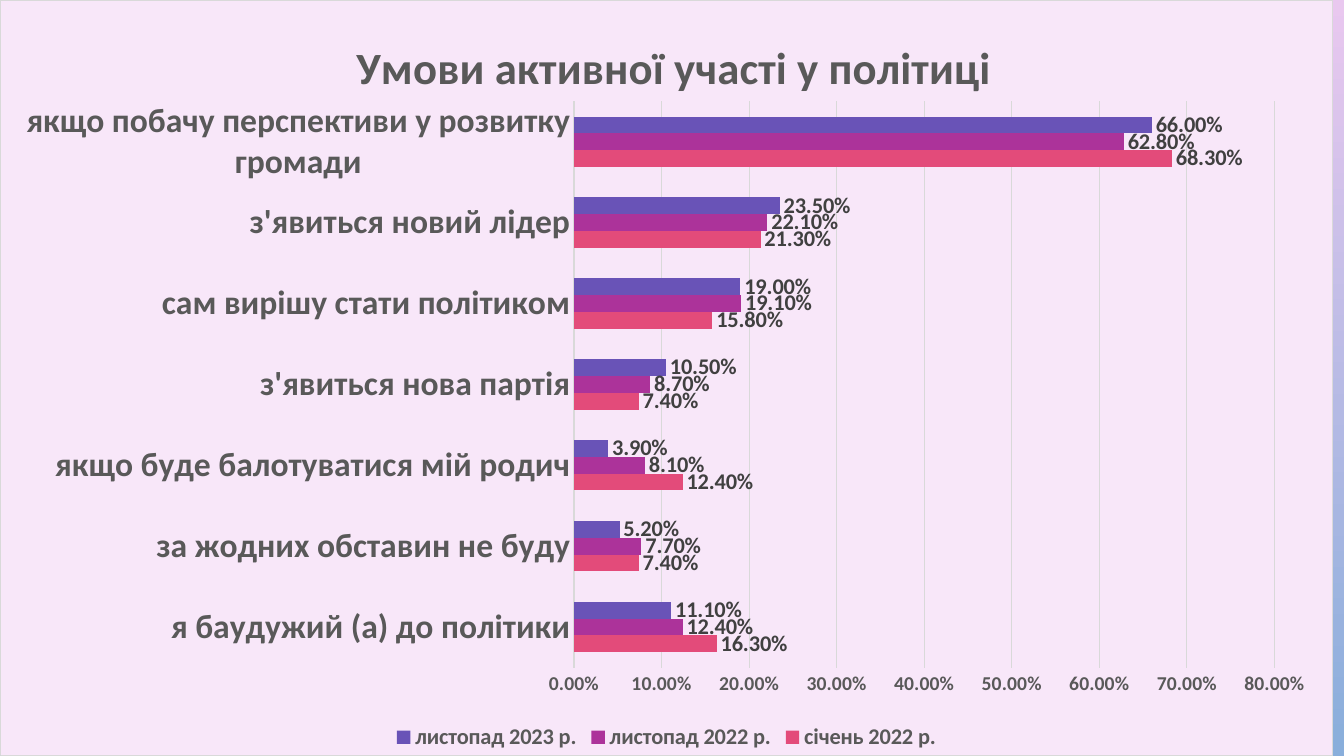
from lxml import etree
from pptx import Presentation
from pptx import util as u
from pptx.chart.data import CategoryChartData
from pptx.dml.color import RGBColor
from pptx.enum import chart as kinds
from pptx.oxml import parse_xml
from pptx.oxml.ns import nsdecls, qn

SCALE = 914400 / 100.8  # EMU in one px
WIDTH, HEIGHT = 1344, 756
COLORS = {
    "sky_top": "E9C8EF", "sky_bottom": "89AEDB", "panel": "F8E7F9",
    "line": "D9D9D9", "text": "595959", "value": "404040",
    "january": "E34B7A", "november": "AC339A", "latest": "6953B7",
}
CONDITIONS = [
    "я баудужий (а) до політики",
    "за жодних обставин не буду",
    "якщо буде балотуватися мій родич",
    "з'явиться нова партія",
    "сам вирішу стати політиком",
    "з'явиться новий лідер",
    "якщо побачу перспективи у розвитку громади",
]
SURVEYS = [
    ("січень 2022 р.", "january", [0.163, 0.074, 0.124, 0.074, 0.158, 0.213, 0.683]),
    ("листопад 2022 р.", "november", [0.124, 0.077, 0.081, 0.087, 0.191, 0.221, 0.628]),
    ("листопад 2023 р.", "latest", [0.111, 0.052, 0.039, 0.105, 0.19, 0.235, 0.66]),
]
PERCENT = "0.00%"


def px(length):
    return u.Emu(round(length * SCALE))


def color(name):
    return RGBColor.from_string(COLORS[name])


class SlideBuilder:
    font_name = "Calibri"

    def __init__(self, deck):
        self.page = deck.slides.add_slide(deck.slide_layouts[6])

    def style(self, font, size, name):
        font.name, font.size, font.bold = self.font_name, u.Pt(size), True
        font.color.rgb = color(name)

    def line(self, line):
        line.color.rgb = color("line")
        line.width = u.Pt(0.75)

    def background(self, *names):
        fill = self.page.background.fill
        fill.gradient()
        fill.gradient_angle = 270
        for stop, name, position in zip(fill.gradient_stops, names, (0, 1)):
            stop.color.rgb = color(name)
            stop.position = position

    def bar_chart(self, left, top, width, height):
        data = CategoryChartData(number_format=PERCENT)
        data.categories = CONDITIONS
        for name, _, values in SURVEYS:
            data.add_series(name, values)
        frame = self.page.shapes.add_chart(
            kinds.XL_CHART_TYPE.BAR_CLUSTERED,
            px(left), px(top), px(width), px(height), data)
        chart = frame.chart
        chart.font.name, chart.font.size = self.font_name, u.Pt(10)
        plot = chart.plots[0]
        plot.gap_width, plot.overlap, plot.vary_by_categories = 182, 0, False
        for series, (_, name, _) in zip(plot.series, SURVEYS):
            series.format.fill.solid()
            series.format.fill.fore_color.rgb = color(name)
            labels = series.data_labels
            labels.show_value = True
            labels.number_format, labels.number_format_is_linked = PERCENT, False
            labels.position = kinds.XL_LABEL_POSITION.OUTSIDE_END
            self.style(labels.font, 16, "value")
        return chart

    def axes(self, chart):
        for axis, size in ((chart.category_axis, 24), (chart.value_axis, 14)):
            axis.major_tick_mark = axis.minor_tick_mark = kinds.XL_TICK_MARK.NONE
            self.style(axis.tick_labels.font, size, "text")
        self.line(chart.category_axis.format.line)
        values = chart.value_axis
        values.minimum_scale, values.maximum_scale, values.major_unit = 0, 0.8, 0.1
        values.tick_labels.number_format = PERCENT
        values.tick_labels.number_format_is_linked = False
        values.format.line.fill.background()
        values.has_major_gridlines = True
        self.line(values.major_gridlines.format.line)

    def title(self, chart, wording):
        chart.has_title = True
        para = chart.chart_title.text_frame.paragraphs[0]
        span = para.add_run()
        span.text = wording
        self.style(span.font, 32, "text")
        chart.chart_title.include_in_layout = False

    def legend(self, chart):
        chart.has_legend = True
        chart.legend.position = kinds.XL_LEGEND_POSITION.BOTTOM
        chart.legend.include_in_layout = False
        self.style(chart.legend.font, 16, "text")

    def panel(self, chart):
        properties = parse_xml(
            f'<c:spPr {nsdecls("c", "a")}><a:solidFill><a:srgbClr val="{COLORS["panel"]}"/>'
            f'</a:solidFill><a:ln w="9525"><a:solidFill><a:srgbClr val="{COLORS["line"]}"/>'
            '</a:solidFill></a:ln></c:spPr>')
        chart.element.find(qn("c:chart")).addnext(properties)

    def place(self, part, **settings):
        """Give a chart part a fixed layout, in shares of the chart."""
        for old in part.findall(qn("c:layout")):
            part.remove(old)
        layout = etree.Element(qn("c:layout"))
        manual = etree.SubElement(layout, qn("c:manualLayout"))
        for tag, value in settings.items():
            etree.SubElement(manual, qn(f"c:{tag}")).set("val", str(value))
        text = part.find(qn("c:tx"))
        if text is None:
            part.insert(0, layout)
        else:
            text.addnext(layout)


def main():
    deck = Presentation()
    deck.slide_width, deck.slide_height = px(WIDTH), px(HEIGHT)
    slide = SlideBuilder(deck)
    slide.background("sky_top", "sky_bottom")

    # Survey chart with its title, axes and legend
    chart = slide.bar_chart(0, 0, 1333, HEIGHT)
    slide.axes(chart)
    slide.title(chart, "Умови активної участі у політиці")
    slide.legend(chart)
    slide.panel(chart)

    # Fixed places of the title and the plot area
    body = chart.element.find(qn("c:chart"))
    slide.place(body.find(qn("c:title")), xMode="edge", yMode="edge",
                x=round(348 / 1333, 4), y=round(28 / HEIGHT, 4))
    slide.place(body.find(qn("c:plotArea")), layoutTarget="inner",
                xMode="edge", yMode="edge",
                x=round(574 / 1333, 4), y=round(101 / HEIGHT, 4),
                w=round(701 / 1333, 4), h=round(567 / HEIGHT, 4))
    deck.save("out.pptx")


if __name__ == "__main__":
    main()
